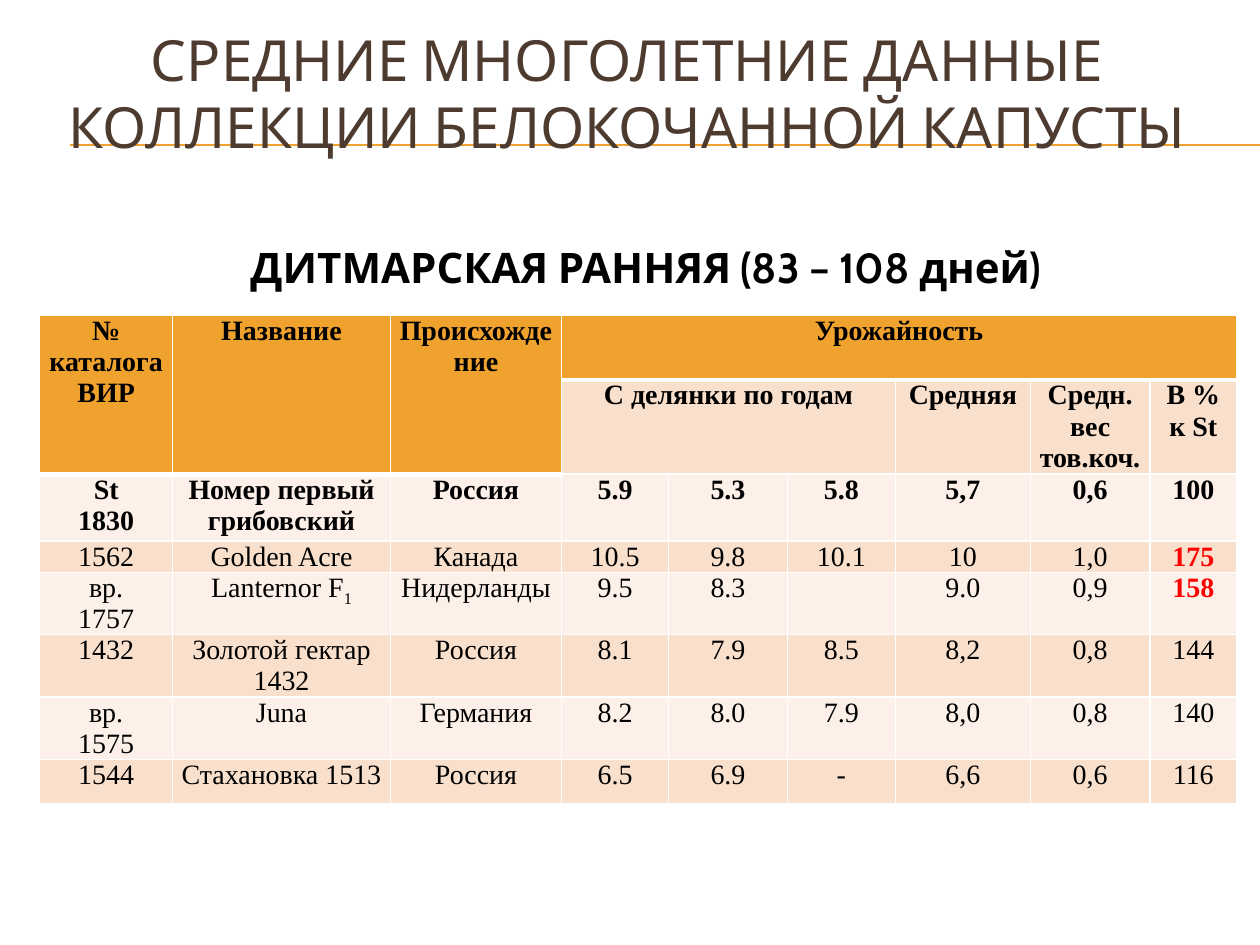
from lxml.etree import SubElement
from pptx import Presentation
from pptx.dml.color import RGBColor
from pptx.enum.shapes import MSO_CONNECTOR as Connector
from pptx.enum.text import MSO_ANCHOR as Anchor, MSO_AUTO_SIZE as AutoSize, PP_ALIGN as Align
from pptx.oxml.ns import qn
from pptx.util import Cm, Pt

ORANGE = RGBColor(0xF0, 0xA2, 0x2E)
PEACH = RGBColor(0xF9, 0xE0, 0xCD)
CREAM = RGBColor(0xFC, 0xF0, 0xE8)
BROWN = RGBColor(0x4E, 0x3B, 0x30)
BLACK = RGBColor(0, 0, 0)
RED = RGBColor(0xFF, 0, 0)
WHITE = RGBColor(0xFF, 0xFF, 0xFF)

TITLE = "СРЕДНИЕ МНОГОЛЕТНИЕ ДАННЫЕ КОЛЛЕКЦИИ БЕЛОКОЧАННОЙ КАПУСТЫ\v "
SUBTITLE = "ДИТМАРСКАЯ РАННЯЯ (83 – 108 дней)"
COLUMN_WIDTHS = [2.68, 4.39, 3.45, 2.16, 2.39, 2.18, 2.72, 2.41, 1.75]
ROW_HEIGHTS = [1.3, 1.9, 1.35, 0.63, 1.25, 1.26, 1.25, 0.89]
ROWS = [
    ["№ каталога ВИР", "Название", "Происхождение", "Урожайность", "", "", "", "", ""],
    ["", "", "", "С делянки по годам", "", "", "Средняя", "Средн.\nвес тов.коч.", "В % к St"],
    ["St\n1830", "Номер первый грибовский", "Россия", "5.9", "5.3", "5.8", "5,7", "0,6", "100"],
    ["1562", "Golden Acre", "Канада", "10.5", "9.8", "10.1", "10", "1,0", "175"],
    ["вр.\n1757", "Lanternor F", "Нидерланды", "9.5", "8.3", "", "9.0", "0,9", "158"],
    ["1432", "Золотой гектар 1432", "Россия", "8.1", "7.9", "8.5", "8,2", "0,8", "144"],
    ["вр.\n1575", "Juna", "Германия", "8.2", "8.0", "7.9", "8,0", "0,8", "140"],
    ["1544", "Стахановка 1513", "Россия", "6.5", "6.9", "-", "6,6", "0,6", "116"],
]
MERGES = [((0, 0), (1, 0)), ((0, 1), (1, 1)), ((0, 2), (1, 2)), ((0, 3), (0, 8)), ((1, 3), (1, 5))]
RECORD_YIELDS = ("175", "158")
HYBRID_CELL = (4, 1)


def format_text(frame, font, size, color, bold):
    """Centre every paragraph and format its runs."""
    for para in frame.paragraphs:
        para.alignment = Align.CENTER
        for span in para.runs:
            span.font.name = font
            span.font.size = Pt(size)
            span.font.color.rgb = color
            span.font.bold = bold


def place(box, left, top, width, height):
    """Set the position and size of a box."""
    box.left, box.top, box.width, box.height = Cm(left), Cm(top), Cm(width), Cm(height)


def add_title(page):
    """Fill and format the title placeholder."""
    box = page.shapes.title
    place(box, 0.58, 0.79, 24.13, 3.6)
    frame = box.text_frame
    frame.text = TITLE
    frame.word_wrap = True
    frame.auto_size = AutoSize.NONE
    frame.vertical_anchor = Anchor.MIDDLE
    frame.paragraphs[0].line_spacing = 0.98
    format_text(frame, "Cabin", 32.4, BROWN, False)


def add_rule(page, top):
    """Draw a thin orange rule behind the other elements."""
    rule = page.shapes.add_connector(Connector.STRAIGHT, Cm(1.42), Cm(top), Cm(25.4), Cm(top))
    rule.line.color.rgb = ORANGE
    rule.line.width = Pt(0.75)
    SubElement(rule._element.spPr, qn("a:effectLst"))
    page.shapes._spTree.insert(2, rule._element)


def add_subtitle(page):
    """Add the bold line above the table."""
    box = page.shapes.add_textbox(Cm(3.18), Cm(4.75), Cm(19.69), Cm(1.4))
    box.text_frame.word_wrap = True
    box.text_frame.text = SUBTITLE
    format_text(box.text_frame, "Cabin", 24, BLACK, True)


def set_borders(cell, bottom):
    """Give a cell white borders with the given bottom width."""
    properties = cell._tc.get_or_add_tcPr()
    widths = {"a:lnL": 1, "a:lnR": 1, "a:lnT": 1, "a:lnB": bottom}
    for position, (tag, width) in enumerate(widths.items()):
        line = SubElement(properties, qn(tag), w=str(Pt(width)))
        fill = SubElement(line, qn("a:solidFill"))
        SubElement(fill, qn("a:srgbClr"), val=str(WHITE))
        properties.insert(position, line)


def fill_cell(cell, row, column, text):
    """Write and format one table cell."""
    header = row == 0 or (row == 1 and column < 3)
    cell.fill.solid()
    cell.fill.fore_color.rgb = ORANGE if header else PEACH if row % 2 else CREAM
    set_borders(cell, 3 if header else 1)
    cell.margin_left = cell.margin_right = Cm(0.13)
    cell.margin_top = cell.margin_bottom = 0
    cell.text_frame.text = text
    if (row, column) == HYBRID_CELL:
        index = cell.text_frame.paragraphs[0].add_run()
        index.text = "1"
        index._r.get_or_add_rPr().set("baseline", "-25000")
    record = text in RECORD_YIELDS
    format_text(cell.text_frame, "Times New Roman", 16, RED if record else BLACK, row < 3 or record)


def add_yield_table(page):
    """Add the table of cabbage varieties and yields."""
    frame = page.shapes.add_table(
        len(ROWS), len(COLUMN_WIDTHS), Cm(0.8), Cm(6.36), Cm(sum(COLUMN_WIDTHS)), Cm(sum(ROW_HEIGHTS)))
    table = frame.table
    table.first_row = table.horz_banding = False
    for column, width in zip(table.columns, COLUMN_WIDTHS):
        column.width = Cm(width)
    for row, height in zip(table.rows, ROW_HEIGHTS):
        row.height = Cm(height)
    for row, texts in enumerate(ROWS):
        for column, text in enumerate(texts):
            fill_cell(table.cell(row, column), row, column, text)
    for first, last in MERGES:
        table.cell(*first).merge(table.cell(*last))


def main():
    """Build the slide and save the deck."""
    deck = Presentation()
    deck.slide_width, deck.slide_height = Cm(25.4), Cm(19.05)
    page = deck.slides.add_slide(deck.slide_layouts[5])
    add_title(page)
    for top in (2.94, 2.92):
        add_rule(page, top)
    add_yield_table(page)
    add_subtitle(page)
    deck.save("out.pptx")


if __name__ == "__main__":
    main()
